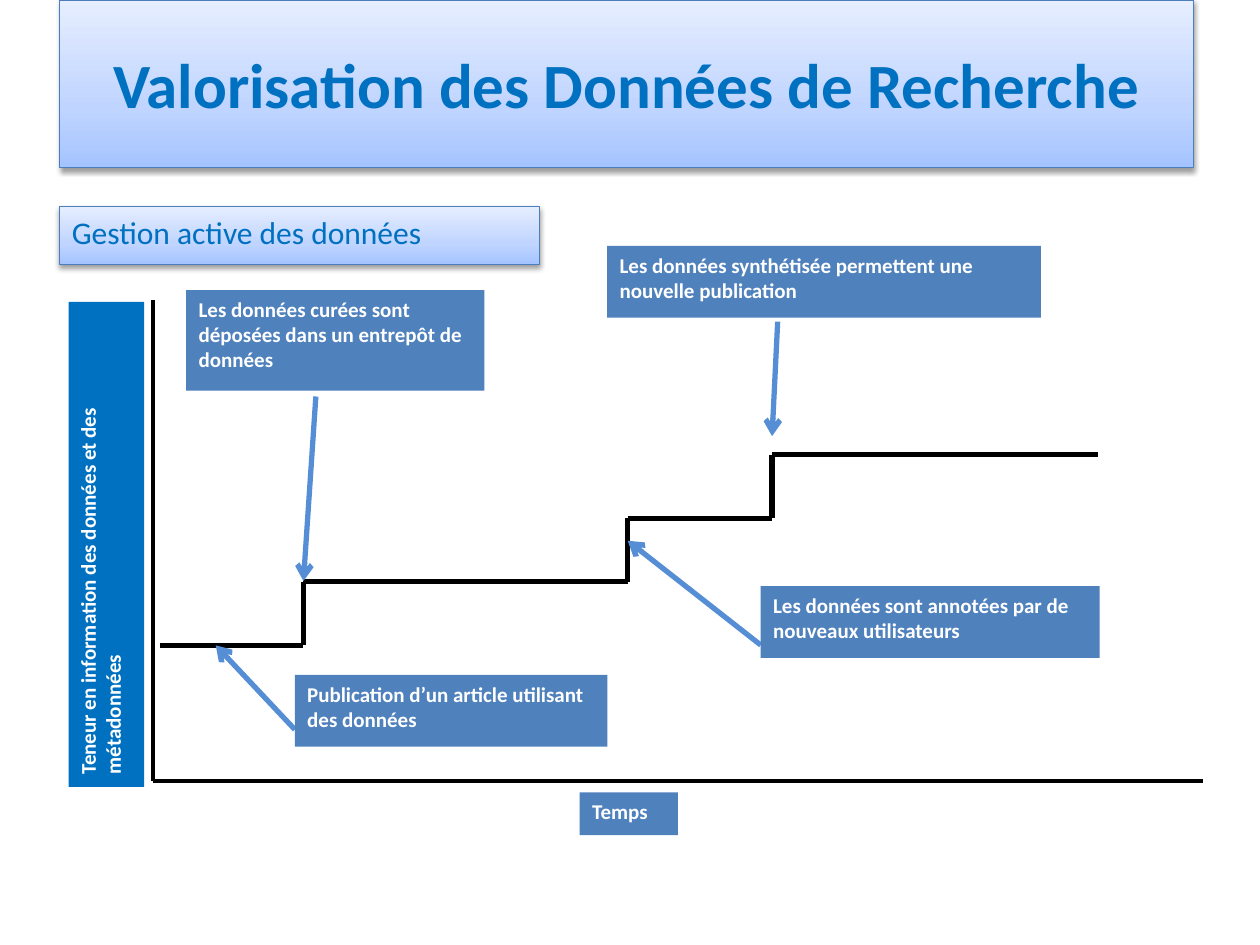
from lxml.etree import SubElement
from pptx import Presentation
from pptx.dml.color import RGBColor
from pptx.enum.shapes import MSO_CONNECTOR, MSO_SHAPE
from pptx.enum.text import MSO_ANCHOR, PP_ALIGN
from pptx.oxml import parse_xml
from pptx.oxml.ns import nsdecls, qn
from pptx.util import Pt

BLACK = RGBColor(0x00, 0x00, 0x00)
WHITE = RGBColor(0xFF, 0xFF, 0xFF)
BLUE = RGBColor(0x00, 0x70, 0xC0)
STEEL = RGBColor(0x4F, 0x81, 0xBD)
EDGE = RGBColor(0x4B, 0x7E, 0xBC)
ARROW = RGBColor(0x55, 0x8E, 0xD5)
GRADIENT = [
    (0, RGBColor(0xA4, 0xC4, 0xFF)),
    (35, RGBColor(0xBF, 0xD4, 0xFF)),
    (100, RGBColor(0xE6, 0xEE, 0xFF)),
]
FONT = "Calibri"

TITLE = ("Valorisation des Données de Recherche", (34, 0, 648, 95.8))
SUBTITLE = ("Gestion active des données", (34, 118, 274.5, 33.1))
LEVEL_LABEL = ("Teneur en information des données et des métadonnées",
               (-77.8, 289.4, 277.2, 43.2))
LABELS = [
    ("Les données curées sont déposées dans un entrepôt de données",
     (106.4, 165.8, 170.4, 57.4)),
    ("Les données synthétisée permettent une nouvelle publication",
     (347, 140.6, 247.9, 41)),
    ("Publication d’un article utilisant des données",
     (168.5, 385.7, 178.7, 41)),
    ("Les données sont annotées par de nouveaux utilisateurs",
     (434.7, 335, 193.7, 41)),
    ("Temps", (331.2, 452.8, 56.2, 24.5)),
]
ARROWS = [
    ((168.5, 416.9), (123.3, 368.8)),
    ((180.5, 226.6), (173.4, 332)),
    ((434.7, 368.6), (358.7, 309)),
    ((444.4, 183.8), (441.2, 249.2)),
]
AXIS_TOP, AXIS_ORIGIN, AXIS_END = (87.6, 171.4), (87.6, 446.2), (687.6, 446.2)
STEP_EDGES = [91.2, 173.4, 358.7, 441.2, 627.6]
STEP_BASE, STEP_RISE = 368.8, 36.35


def add_line(page, start, end, color, width, arrow=False):
    line = page.shapes.add_connector(
        MSO_CONNECTOR.STRAIGHT, *(Pt(v) for v in (*start, *end)))
    line.line.color.rgb = color
    line.line.width = Pt(width)
    if arrow:
        SubElement(line.line._get_or_add_ln(), qn("a:tailEnd"), type="arrow")
    SubElement(line._element.spPr, qn("a:effectLst"))


def add_box(page, content, size=12, color=WHITE, bold=True, fill=STEEL,
            align=PP_ALIGN.LEFT, anchor=MSO_ANCHOR.TOP):
    text, frame = content
    box = page.shapes.add_shape(MSO_SHAPE.RECTANGLE, *(Pt(v) for v in frame))
    box.shadow.inherit = False
    box.fill.solid()
    box.fill.fore_color.rgb = fill
    box.line.fill.background()
    box.text_frame.word_wrap = True
    box.text_frame.vertical_anchor = anchor
    para = box.text_frame.paragraphs[0]
    para.alignment = align
    span = para.add_run()
    span.text = text
    span.font.name = FONT
    span.font.size = Pt(size)
    span.font.bold = bold
    span.font.color.rgb = color
    return box


def add_banner(page, content, **style):
    box = add_box(page, content, color=BLUE, **style)
    box.line.color.rgb = EDGE
    box.line.width = Pt(0.75)
    stops = "".join(
        f'<a:gs pos="{place * 1000}"><a:srgbClr val="{color}"/></a:gs>'
        for place, color in GRADIENT)
    properties = box._element.spPr
    properties.replace(properties.find(qn("a:solidFill")), parse_xml(
        f'<a:gradFill {nsdecls("a")} rotWithShape="1"><a:gsLst>{stops}</a:gsLst>'
        '<a:lin ang="16200000" scaled="0"/></a:gradFill>'))
    properties.find(qn("a:effectLst")).append(parse_xml(
        f'<a:outerShdw {nsdecls("a")} blurRad="{Pt(3.1)}" dist="{Pt(1.6)}" '
        'dir="5400000" rotWithShape="0"><a:srgbClr val="000000">'
        '<a:alpha val="38000"/></a:srgbClr></a:outerShdw>'))


def main():
    deck = Presentation()
    deck.slide_width, deck.slide_height = Pt(720), Pt(540)
    page = deck.slides.add_slide(deck.slide_layouts[6])

    add_line(page, AXIS_TOP, AXIS_ORIGIN, BLACK, 2.25)
    add_line(page, AXIS_ORIGIN, AXIS_END, BLACK, 2.25)
    for step, (left, right) in enumerate(zip(STEP_EDGES, STEP_EDGES[1:])):
        level = STEP_BASE - step * STEP_RISE
        add_line(page, (left, level), (right, level), BLACK, 3)
        if step:
            add_line(page, (left, level), (left, level + STEP_RISE), BLACK, 3)

    add_box(page, LEVEL_LABEL, fill=BLUE).rotation = 270
    for start, end in ARROWS:
        add_line(page, start, end, ARROW, 3, arrow=True)
    for label in LABELS:
        add_box(page, label)
    add_banner(page, SUBTITLE, size=18, bold=False)
    add_banner(page, TITLE, size=36, align=PP_ALIGN.CENTER,
               anchor=MSO_ANCHOR.MIDDLE)
    deck.save("out.pptx")


if __name__ == "__main__":
    main()
